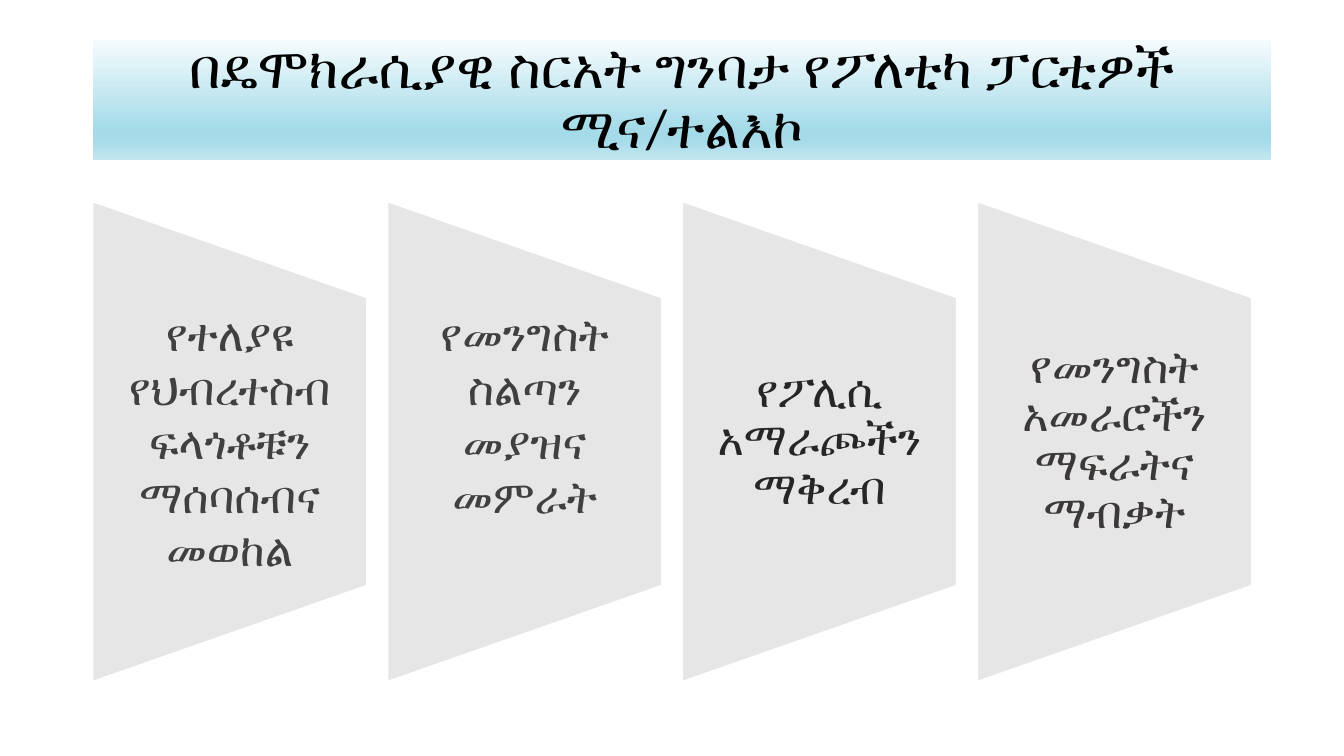
"""Build a slide on the roles of political parties in building democracy."""
from dataclasses import dataclass

import lxml.etree
import pptx
import pptx.dml.color
import pptx.enum.shapes
import pptx.enum.text
import pptx.oxml
import pptx.oxml.ns
import pptx.util


@dataclass(frozen=True)
class Theme:
    font: str = "Calibri"
    heading_size: float = 39.6
    role_size: float = 32
    heading_ink: str = "000000"
    panel_fill: str = "E7E6E6"
    panel_edge: str = "FFFFFF"
    soft_ink: str = "404040"
    dark_ink: str = "262626"
    warm_ink: str = "3B3838"
    banner_stops: tuple = ((0, "F5FBFD"), (74, "A5DBE9"), (83, "A5DBE9"), (100, "C3E7F0"))


@dataclass(frozen=True)
class Role:
    wording: str
    ink: str
    line_spacing: float = 1.0
    lift: float = 0.0


THEME = Theme()
SLIDE_WIDTH = pptx.util.Inches(13.33)
SLIDE_HEIGHT = pptx.util.Inches(7.5)

LEFT_MARGIN = 6.9
BANNER_TOP, BANNER_WIDTH, BANNER_HEIGHT = 5.33, 87.7, 15.87
COLUMN_PITCH, COLUMN_WIDTH = 21.94, 20.4
ROW_CENTRE, PANEL_HEIGHT, ROLE_HEIGHT = 58.4, 63.47, 38.13
ROLE_PADDING = 1.65

HEADING = "በዴሞክራሲያዊ ስርአት ግንባታ የፖለቲካ ፓርቲዎች ሚና/ተልእኮ"
ROLES = (
    Role("የተለያዩ የህብረተስብ ፍላጎቶቹን ማሰባሰብና መወከል", THEME.soft_ink),
    Role("የመንግስት ስልጣን መያዝና መምራት", THEME.soft_ink, lift=7.1),
    Role("የፖሊሲ አማራጮችን ማቅረብ", THEME.dark_ink, 0.9),
    Role("የመንግስት አመራሮችን ማፍራትና ማብቃት", THEME.warm_ink, 0.9),
)


def across(percent: float) -> int:
    return round(SLIDE_WIDTH * percent / 100)


def down(percent: float) -> int:
    return round(SLIDE_HEIGHT * percent / 100)


def colour(code: str) -> pptx.dml.color.RGBColor:
    return pptx.dml.color.RGBColor.from_string(code)


def write(frame, wording: str, size: float, ink: str, line_spacing: float) -> None:
    frame.word_wrap = True
    frame.vertical_anchor = pptx.enum.text.MSO_ANCHOR.MIDDLE
    frame.text = wording
    paragraph = frame.paragraphs[0]
    paragraph.alignment = pptx.enum.text.PP_ALIGN.CENTER
    paragraph.line_spacing = line_spacing
    font = paragraph.runs[0].font
    font.name = THEME.font
    font.size = pptx.util.Pt(size)
    font.color.rgb = colour(ink)


def fill_banner(banner) -> None:
    banner.fill.gradient()
    banner.fill.gradient_angle = 270
    stops = banner.fill._fill._gradFill.find(pptx.oxml.ns.qn("a:gsLst"))
    for stop in list(stops):
        stops.remove(stop)
    for position, code in THEME.banner_stops:
        stop = lxml.etree.SubElement(stops, pptx.oxml.ns.qn("a:gs"), pos=str(position * 1000))
        lxml.etree.SubElement(stop, pptx.oxml.ns.qn("a:srgbClr"), val=code)


def draw_heading(slide) -> None:
    banner = slide.shapes.add_shape(
        pptx.enum.shapes.MSO_SHAPE.RECTANGLE,
        across(LEFT_MARGIN), down(BANNER_TOP), across(BANNER_WIDTH), down(BANNER_HEIGHT),
    )
    banner.shadow.inherit = False
    banner.line.fill.background()
    fill_banner(banner)
    write(banner.text_frame, HEADING, THEME.heading_size, THEME.heading_ink, 0.9)


def draw_role(slide, role: Role, column: int) -> None:
    left = across(LEFT_MARGIN + column * COLUMN_PITCH)
    breadth, length = across(COLUMN_WIDTH), down(PANEL_HEIGHT)
    panel = slide.shapes.add_shape(
        pptx.enum.shapes.MSO_SHAPE.FLOWCHART_MANUAL_OPERATION,
        left + (breadth - length) // 2, down(ROW_CENTRE) - breadth // 2, length, breadth,
    )
    panel.rotation = 270
    panel.shadow.inherit = False
    panel.fill.solid()
    panel.fill.fore_color.rgb = colour(THEME.panel_fill)
    panel.line.color.rgb = colour(THEME.panel_edge)
    panel.line.width = pptx.util.Pt(1)

    caption = slide.shapes.add_textbox(
        left, down(ROW_CENTRE - ROLE_HEIGHT / 2), breadth, down(ROLE_HEIGHT)
    ).text_frame
    caption.margin_left = caption.margin_right = across(ROLE_PADDING)
    caption.margin_top = 0
    caption.margin_bottom = down(role.lift)
    write(caption, role.wording, THEME.role_size, role.ink, role.line_spacing)


def main() -> None:
    presentation = pptx.Presentation()
    presentation.slide_width = SLIDE_WIDTH
    presentation.slide_height = SLIDE_HEIGHT
    slide = presentation.slides.add_slide(presentation.slide_layouts[6])
    draw_heading(slide)
    for column, role in enumerate(ROLES):
        draw_role(slide, role, column)
    presentation.save("out.pptx")


if __name__ == "__main__":
    main()
